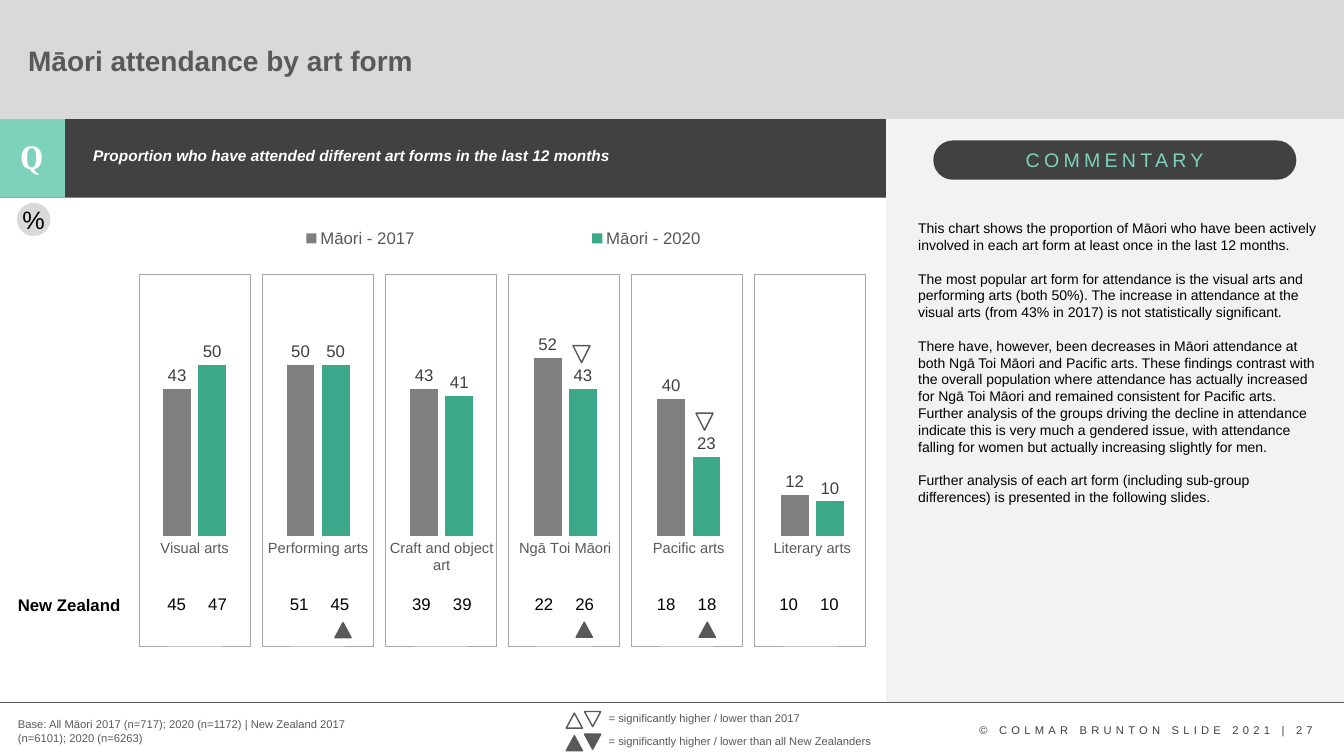
from dataclasses import dataclass
from lxml import etree
from pptx import Presentation
from pptx import util as u
from pptx.chart import data as chart_data
from pptx.dml.color import RGBColor
from pptx.enum import chart as charts, shapes, text
from pptx.oxml import parse_xml
from pptx.oxml.ns import nsdecls, qn


@dataclass(frozen=True)
class Theme:
    font: str = "Arial"
    serif: str = "Cambria"
    header: str = "D9D9D9"
    panel: str = "F2F2F2"
    dark: str = "414141"
    mint: str = "7ED2BB"
    green: str = "3AA889"
    bar: str = "7F7F7F"
    frame: str = "A6A6A6"
    grey: str = "595959"
    label: str = "404040"
    black: str = "000000"
    white: str = "FFFFFF"
    title: float = 20
    symbol: float = 18
    question: float = 24
    heading: float = 14
    value: float = 12
    subtitle: float = 11
    axis: float = 10.5
    body: float = 10
    small: float = 8


@dataclass(frozen=True)
class Box:
    """A rectangle in centimetres."""
    left: float
    top: float
    width: float
    height: float

    def inner(self, left, top, width, height):
        return Box(self.left + left, self.top + top, width, height)

    def lengths(self):
        return [u.Cm(n) for n in (self.left, self.top, self.width, self.height)]


THEME = Theme()
PRESET = shapes.MSO_SHAPE
CENTER = text.PP_ALIGN.CENTER
LEGEND_LAYOUT = {"xMode": "edge", "yMode": "edge", "x": 0.02, "y": 0.08, "w": 0.96, "h": 0.08}
PLOT_LAYOUT = {"layoutTarget": "inner", "xMode": "edge", "yMode": "edge",
               "x": 0.018, "y": 0.031, "w": 0.964, "h": 0.685}

ART_FORMS = ["Visual arts", "Performing arts", "Craft and object art",
             "Ngā Toi Māori", "Pacific arts", "Literary arts"]
MAORI = {"Māori - 2017": ([43, 50, 43, 52, 40, 12], THEME.bar),
         "Māori - 2020": ([50, 50, 41, 43, 23, 10], THEME.green)}
NEW_ZEALAND = [(45, 47), (51, 45), (39, 39), (22, 26), (18, 18), (10, 10)]
# Markers: art form index -> offset from its frame
LOWER_THAN_2017 = {3: (1.63, 1.8), 4: (1.63, 3.5)}
ABOVE_OR_BELOW_NZ = {1: (1.83, 8.78), 3: (1.71, 8.77), 4: (1.71, 8.77)}
COMMENTARY = [
    "This chart shows the proportion of Māori who have been actively involved in each art form "
    "at least once in the last 12 months.",
    "The most popular art form for attendance is the visual arts and performing arts (both 50%). "
    "The increase in attendance at the visual arts (from 43% in 2017) is not statistically significant.",
    "There have, however, been decreases in Māori attendance at both Ngā Toi Māori and Pacific arts. "
    "These findings contrast with the overall population where attendance has actually increased for "
    "Ngā Toi Māori and remained consistent for Pacific arts. Further analysis of the groups driving the "
    "decline in attendance indicate this is very much a gendered issue, with attendance falling for women "
    "but actually increasing slightly for men.",
    "Further analysis of each art form (including sub-group differences) is presented in the following slides.",
]


def set_font(font, size, color, bold=False, italic=False, name=THEME.font):
    font.name, font.size, font.bold, font.italic = name, u.Pt(size), bold, italic
    font.color.rgb = RGBColor.from_string(color)


def add_text(slide, box, paragraphs, size, color, align=None, wrap=True, spacing=0, gap=0, **style):
    """Add a text box; spacing is between letters, gap between paragraphs, in points."""
    label = slide.shapes.add_textbox(*box.lengths())
    label.text_frame.text = "\n".join(paragraphs)
    label.text_frame.word_wrap = wrap
    for index, paragraph in enumerate(label.text_frame.paragraphs):
        paragraph.alignment = align
        if index:
            paragraph.space_before = u.Pt(gap)
        for run in paragraph.runs:
            set_font(run.font, size, color, **style)
            if spacing:
                run.font._element.set("spc", str(spacing * 100))
    return label


def add_preset(slide, preset, box, fill=None, line=None, weight=0.5):
    shape = slide.shapes.add_shape(preset, *box.lengths())
    shape.shadow.inherit = False
    if fill:
        shape.fill.solid()
        shape.fill.fore_color.rgb = RGBColor.from_string(fill)
    else:
        shape.fill.background()
    if line:
        shape.line.color.rgb = RGBColor.from_string(line)
        shape.line.width = u.Pt(weight)
    else:
        shape.line.fill.background()
    return shape


def add_marker(slide, box, fill, down=False):
    marker = add_preset(slide, PRESET.ISOSCELES_TRIANGLE, box, fill, THEME.grey, 1)
    marker.rotation = 180 if down else 0


def set_layout(parent, settings):
    """Give a chart part a manual layout."""
    for old in parent.findall(qn("c:layout")):
        parent.remove(old)
    layout = parse_xml(f"<c:layout {nsdecls('c')}><c:manualLayout/></c:layout>")
    for key, value in settings.items():
        etree.SubElement(layout[0], qn(f"c:{key}")).set("val", str(value))
    before = parent.find(qn("c:legendPos"))
    if before is None:
        parent.insert(0, layout)
    else:
        before.addnext(layout)


def add_header(slide, box):
    add_preset(slide, PRESET.RECTANGLE, box, THEME.header)
    title = add_text(slide, box.inner(0.46, 0.53, 28.42, 1.98), ["Māori attendance by art form"],
                     THEME.title, THEME.grey, bold=True)
    title.text_frame.vertical_anchor = text.MSO_ANCHOR.MIDDLE


def add_question(slide, box):
    add_preset(slide, PRESET.RECTANGLE, box, THEME.dark)
    add_preset(slide, PRESET.RECTANGLE, box.inner(0, 0, 1.64, box.height), THEME.mint)
    add_text(slide, box.inner(0.2, 0.3, 1.2, 1.27), ["Q"], THEME.question, THEME.white,
             CENTER, bold=True, name=THEME.serif)
    add_text(slide, box.inner(2.1, 0.56, 19.3, 1.17),
             ["Proportion who have attended different art forms in the last 12 months"],
             THEME.subtitle, THEME.white, bold=True, italic=True)


def add_attendance_chart(slide, box):
    attendance = chart_data.CategoryChartData()
    attendance.categories = ART_FORMS
    for name, (values, _) in MAORI.items():
        attendance.add_series(name, values)
    chart = slide.shapes.add_chart(charts.XL_CHART_TYPE.COLUMN_CLUSTERED, *box.lengths(), attendance).chart
    set_font(chart.font, THEME.body, THEME.black)
    chart._chartSpace.chart.addnext(parse_xml(
        f"<c:spPr {nsdecls('c', 'a')}><a:noFill/><a:ln><a:noFill/></a:ln></c:spPr>"))
    chart.has_title = False
    chart.has_legend = True
    chart.legend.position = charts.XL_LEGEND_POSITION.BOTTOM
    chart.legend.include_in_layout = False
    set_font(chart.legend.font, THEME.value, THEME.grey)
    set_layout(chart.legend._element, LEGEND_LAYOUT)
    set_layout(chart._chartSpace.chart.plotArea, PLOT_LAYOUT)

    art_axis, percent_axis = chart.category_axis, chart.value_axis
    art_axis.major_tick_mark = charts.XL_TICK_MARK.NONE
    art_axis.format.line.fill.background()
    set_font(art_axis.tick_labels.font, THEME.axis, THEME.grey)
    percent_axis.minimum_scale, percent_axis.maximum_scale = 0, 100
    percent_axis.has_major_gridlines = False
    percent_axis.visible = False

    plot = chart.plots[0]
    plot.gap_width, plot.overlap, plot.vary_by_categories = 219, -27, False
    for series, (_, color) in zip(plot.series, MAORI.values()):
        series.format.fill.solid()
        series.format.fill.fore_color.rgb = RGBColor.from_string(color)
        series.data_labels.show_value = True
        series.data_labels.position = charts.XL_LABEL_POSITION.OUTSIDE_END
        set_font(series.data_labels.font, THEME.value, THEME.label)


def add_national_table(slide, box):
    columns = 3 * len(NEW_ZEALAND)
    table = slide.shapes.add_table(1, columns, *box.lengths()).table
    table.first_row = table.horz_banding = False
    label_width = 3.3
    for index, column in enumerate(table.columns):
        column.width = u.Cm((box.width - label_width) / (columns - 1) if index else label_width)
        cell = table.cell(0, index)
        cell.fill.background()
        cell.margin_left = cell.margin_right = 0
        art_form, year = divmod(index, 3)
        if year:
            cell.text_frame.text = str(NEW_ZEALAND[art_form][year - 1])
            paragraph = cell.text_frame.paragraphs[0]
            paragraph.alignment = CENTER
            set_font(paragraph.runs[0].font, THEME.value, THEME.black)


def add_results(slide, box):
    add_attendance_chart(slide, box.inner(3, -0.48, 19.38, 12.57))
    add_national_table(slide, box.inner(0.64, 9.9, 20.78, 1.04))
    add_text(slide, box.inner(0.2, 9.88, 3.12, 0.76), ["New Zealand"], THEME.value, THEME.black,
             wrap=False, bold=True)
    add_preset(slide, PRESET.OVAL, box.inner(0.43, 0.13, 0.84, 0.84), THEME.header)
    percent = add_text(slide, box.inner(0.43, 0.13, 0.84, 0.84), ["%"], THEME.symbol, THEME.black,
                       CENTER, wrap=False).text_frame
    percent.margin_left = percent.margin_right = percent.margin_top = percent.margin_bottom = 0
    percent.vertical_anchor = text.MSO_ANCHOR.MIDDLE
    for index in range(len(ART_FORMS)):
        frame = box.inner(3.51 + 3.1 * index, 1.93, 2.8, 9.37)
        add_preset(slide, PRESET.RECTANGLE, frame, line=THEME.frame)
        if index in LOWER_THAN_2017:
            add_marker(slide, frame.inner(*LOWER_THAN_2017[index], 0.43, 0.43), THEME.white, down=True)
        if index in ABOVE_OR_BELOW_NZ:
            add_marker(slide, frame.inner(*ABOVE_OR_BELOW_NZ[index], 0.41, 0.38), THEME.grey)


def add_commentary(slide, box):
    add_preset(slide, PRESET.RECTANGLE, box, THEME.panel)
    pill = add_preset(slide, PRESET.ROUNDED_RECTANGLE, box.inner(1.19, 0.54, 9.15, 0.99), THEME.dark)
    pill.adjustments[0] = 0.5
    add_text(slide, box.inner(3.27, 0.6, 5.13, 0.86), ["COMMENTARY"], THEME.heading, THEME.mint,
             wrap=False, spacing=3)
    add_text(slide, box.inner(0.56, 2.41, 10.6, 8.15), COMMENTARY, THEME.body, THEME.black, gap=12)


def add_footer(slide, box):
    rule = slide.shapes.add_connector(shapes.MSO_CONNECTOR.STRAIGHT, u.Cm(box.left), u.Cm(box.top),
                                      u.Cm(box.left + box.width), u.Cm(box.top))
    rule.line.color.rgb = RGBColor.from_string(THEME.grey)
    rule.line.width = u.Pt(0.5)
    etree.SubElement(rule._element.spPr, qn("a:effectLst"))
    add_text(slide, box.inner(0.2, 0.26, 9.5, 0.94),
             ["Base: All Māori 2017 (n=717); 2020 (n=1172) | New Zealand 2017 (n=6101); 2020 (n=6263)"],
             THEME.small, THEME.grey)
    keys = [("2017", THEME.white), ("all New Zealanders", THEME.grey)]
    for row, (reference, fill) in enumerate(keys):
        key = box.inner(14.27, 0.11 + 0.57 * row, 8, 0.6)
        add_marker(slide, key.inner(0, 0.16, 0.41, 0.38), fill)
        add_marker(slide, key.inner(0.46, 0.12, 0.41, 0.38), fill, down=True)
        add_text(slide, key.inner(0.82, 0, 7.2, 0.6),
                 [f"= significantly higher / lower than {reference}"], THEME.small, THEME.grey, wrap=False)
    add_text(slide, box.inner(24.43, 0.39, 9.3, 0.6), ["© COLMAR BRUNTON SLIDE 2021 | 27"],
             THEME.small, THEME.label, spacing=3)


def main():
    deck = Presentation()
    deck.slide_width, deck.slide_height = u.Cm(33.87), u.Cm(19.05)
    slide = deck.slides.add_slide(deck.slide_layouts[6])
    add_header(slide, Box(0, 0, 33.87, 3))
    add_question(slide, Box(0, 3, 22.33, 1.98))
    add_commentary(slide, Box(22.33, 3, 11.54, 14.7))
    add_results(slide, Box(0, 4.98, 22.33, 12.72))
    add_footer(slide, Box(0, 17.7, 33.87, 1.35))
    deck.save("out.pptx")


if __name__ == "__main__":
    main()
